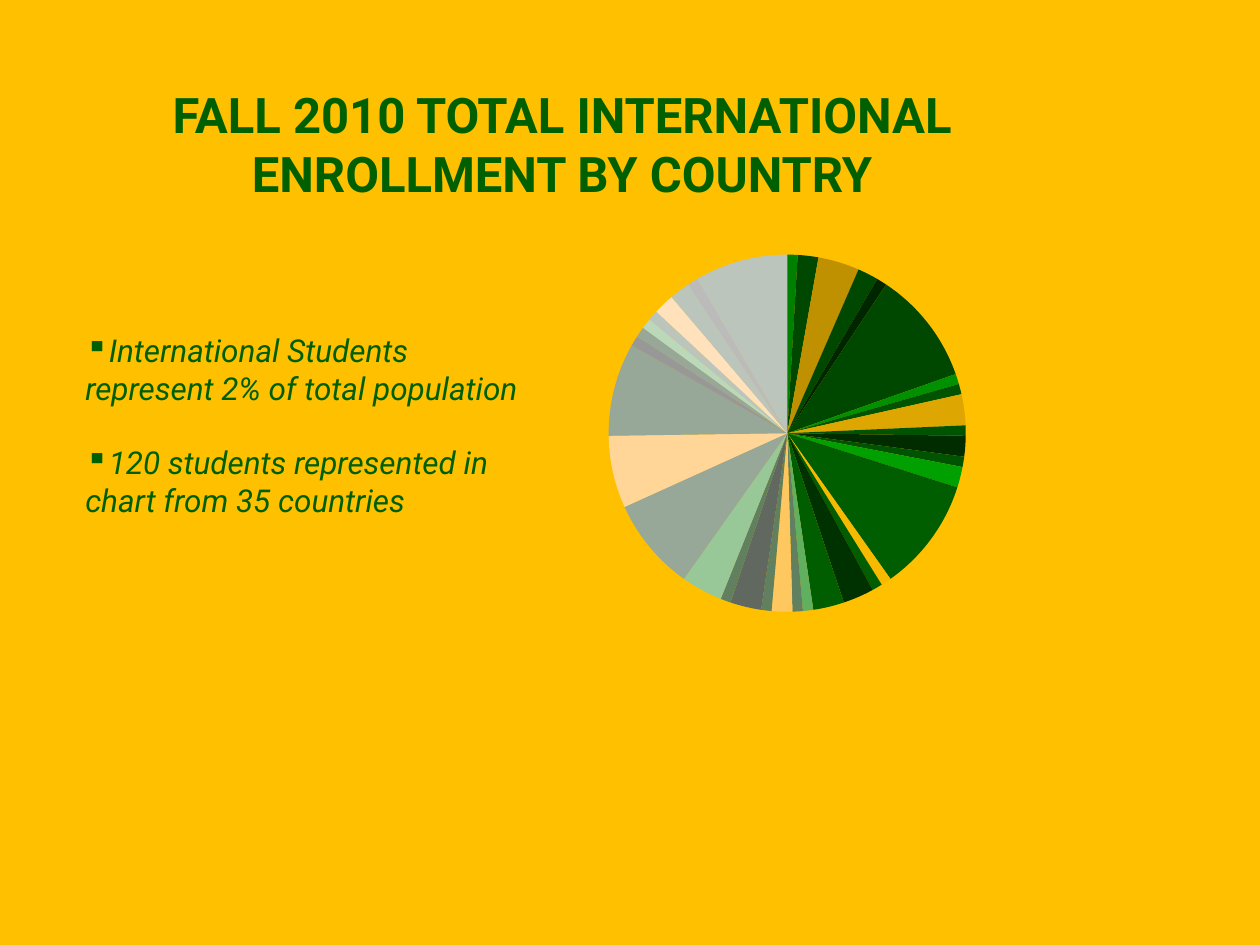
from pptx import Presentation
from pptx import util as u
from pptx.chart.data import CategoryChartData
from pptx.dml.color import RGBColor
from pptx.enum import chart as ch, text as t
from pptx.oxml import parse_xml
from pptx.oxml.ns import nsdecls
from lxml import etree

Cm, Pt = u.Cm, u.Pt
hues = {"back": "FFC000", "text": "006000"}
# Slice colours, one per round of six slices, from dark to pale
tones = {
    "light": ["008000", "009000", "00A000", "60B060", "98C898", "BBD8BB"],
    "green": ["004800", "005300", "005D00", "60805F", "98A898", "BBC5BB"],
    "gold": ["BF9000", "DDA600", "F8BA00", "FFC760", "FFD598", "FFE2BB"],
    "dark": ["002600", "002C00", "003100", "606860", "989898", "BBBBBB"],
}
cycle = ["light", "green", "gold", "green", "dark", "green"]
counts = [1, 2, 4, 2, 1, 11, 1, 1, 3, 1, 2, 1, 2, 11, 1, 1, 3, 3,
          1, 1, 2, 1, 3, 1, 4, 9, 7, 9, 1, 1, 1, 1, 2, 2, 1, 9]


def style(font, size):
    font.name = "Roboto"
    font.size = Pt(size)
    font.color.rgb = RGBColor.from_string(hues["text"])


prs = Presentation()
prs.slide_width, prs.slide_height = Cm(25.4), Cm(19.05)
slide = prs.slides.add_slide(prs.slide_layouts[5])
slide.background.fill.solid()
slide.background.fill.fore_color.rgb = RGBColor.from_string(hues["back"])

# Title
title = slide.shapes.title
title.left, title.top, title.width, title.height = Cm(1.27), Cm(0.89), Cm(20.12), Cm(3.18)
frame = title.text_frame
frame.text = "FALL 2010 TOTAL INTERNATIONAL ENROLLMENT BY COUNTRY"
frame.auto_size = t.MSO_AUTO_SIZE.NONE
frame.vertical_anchor = t.MSO_ANCHOR.BOTTOM
frame.margin_left = frame.margin_right = Cm(0.13)
frame.margin_top = frame.margin_bottom = 0
para = frame.paragraphs[0]
para.alignment = t.PP_ALIGN.CENTER
font = para.runs[0].font
style(font, 28)
font.bold = True

# Pie of students by country
data = CategoryChartData()
data.categories = [str(n + 1) for n in range(len(counts))]
data.add_series("Series 1", counts)
chart = slide.shapes.add_chart(ch.XL_CHART_TYPE.PIE, Cm(12.27), Cm(4.45),
                               Cm(8.89), Cm(11.58), data).chart
chart.has_title = chart.has_legend = False
style(chart.font, 10)
plot = chart.plots[0]
plot.vary_by_categories = True
for n in range(len(counts)):
    fill = plot.series[0].points[n].format.fill
    fill.solid()
    fill.fore_color.rgb = RGBColor.from_string(tones[cycle[n % 6]][n // 6])

# Fixed place of the pie inside the chart
area = chart._chartSpace.chart.plotArea
for old in area.findall("{*}layout"):
    area.remove(old)
box = {"x": 0, "y": 0, "w": 0.81, "h": 0.74}
parts = '<c:layoutTarget val="inner"/>'
parts += "".join(f'<c:{k}Mode val="edge"/>' for k in "xy")
parts += "".join(f'<c:{k} val="{v}"/>' for k, v in box.items())
area.insert(0, parse_xml(f'<c:layout {nsdecls("c")}><c:manualLayout>{parts}'
                         '</c:manualLayout></c:layout>'))

# Bulleted facts
facts = ["International Students represent 2% of total population",
         "120 students represented in chart from 35 countries"]
frame = slide.shapes.add_textbox(Cm(1.47), Cm(6.55), Cm(9.53), Cm(6.4)).text_frame
frame.word_wrap = True
for n, fact in enumerate(facts):
    para = frame.add_paragraph() if n else frame.paragraphs[0]
    para.text = fact
    props = para._p.get_or_add_pPr()
    props.set("marL", "0")
    props.set("indent", "0")
    if n:
        para.space_before = Pt(21)
    mark = etree.SubElement(props, props.tag.replace("pPr", "buChar"))
    mark.set("char", "▪")
    font = para.runs[0].font
    style(font, 18)
    font.italic = True

prs.save("out.pptx")
